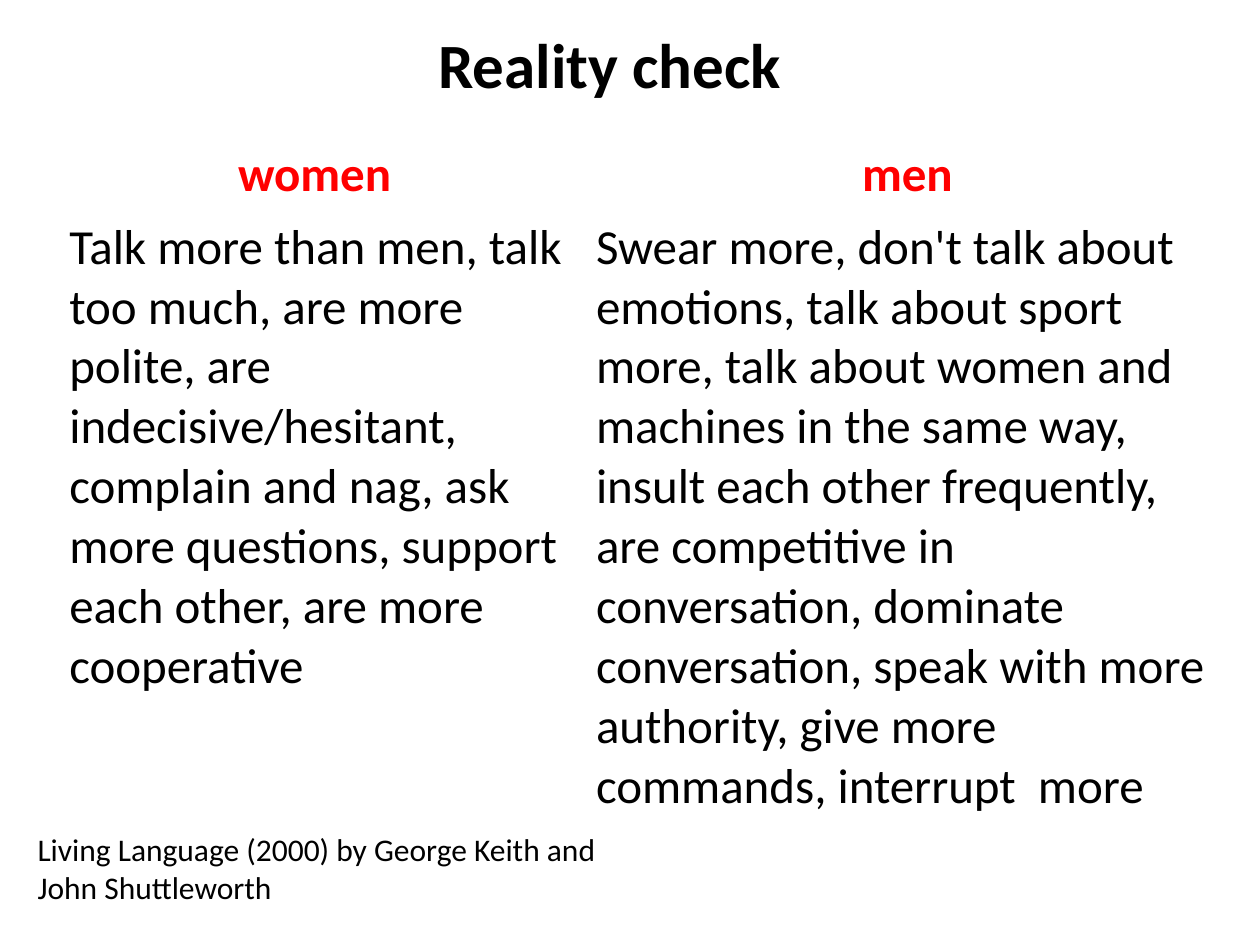
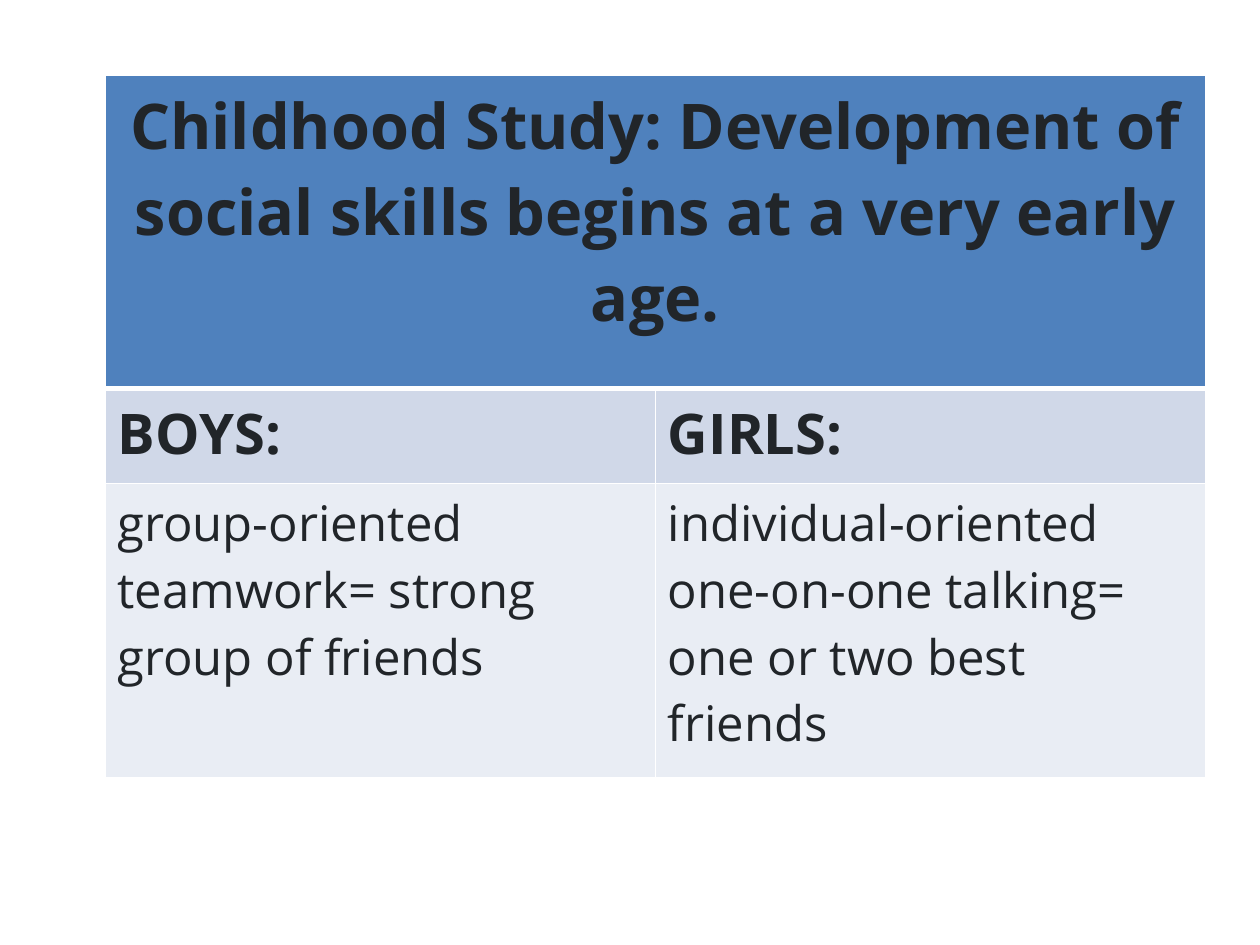
from lxml import etree
from pptx import Presentation
from pptx.dml.color import RGBColor
from pptx.enum import text
from pptx.oxml import ns
from pptx.util import Pt

BLACK, RED, WHITE, INK = "000000", "FF0000", "FFFFFF", "212529"
HEADER_BLUE, BAND_DARK, BAND_LIGHT = "4F81BD", "D0D8E8", "E9EDF4"
TITLE_ONLY, BLANK = 5, 6
CENTER = text.PP_ALIGN.CENTER
LEFT = text.PP_ALIGN.LEFT


def color(value):
    return RGBColor.from_string(value)


def write(frame, words, size, font, ink, bold=False, align=LEFT):
    frame.word_wrap = True
    para = frame.paragraphs[0]
    para.alignment = align
    span = para.add_run()
    span.text = words
    span.font.size = Pt(size)
    span.font.name = font
    span.font.bold = bold
    span.font.color.rgb = color(ink)


def add_title(slide, words, left, top, width, height):
    title = slide.shapes.title
    title.left, title.top = Pt(left), Pt(top)
    title.width, title.height = Pt(width), Pt(height)
    frame = title.text_frame
    frame.auto_size = text.MSO_AUTO_SIZE.NONE
    frame.vertical_anchor = text.MSO_ANCHOR.TOP
    write(frame, words, 36, "Calibri", BLACK, True, CENTER)


def add_note(slide, words, left, top, width, height):
    box = slide.shapes.add_textbox(Pt(left), Pt(top), Pt(width), Pt(height))
    write(box.text_frame, words, 18, "Calibri", BLACK)


def add_grid(slide, left, top, widths, heights):
    """Add a table without the style's own header and banding."""
    grid = slide.shapes.add_table(
        len(heights), len(widths), Pt(left), Pt(top),
        Pt(sum(widths)), Pt(sum(heights))).table
    grid.first_row = grid.horz_banding = False
    for column, width in zip(grid.columns, widths):
        column.width = Pt(width)
    for row, height in zip(grid.rows, heights):
        row.height = Pt(height)
    return grid


def set_borders(cell, **widths):
    """Draw white cell borders; widths are in points, keyed L, R, T, B."""
    props = cell._tc.get_or_add_tcPr()
    for side, width in widths.items():
        line = etree.SubElement(props, ns.qn(f"a:ln{side}"), w=str(Pt(width)))
        fill = etree.SubElement(line, ns.qn("a:solidFill"))
        etree.SubElement(fill, ns.qn("a:srgbClr"), val=WHITE)


def fill_cell(cell, fill=None):
    if fill:
        cell.fill.solid()
        cell.fill.fore_color.rgb = color(fill)
    else:
        cell.fill.background()


def build_reality_check(deck):
    slide = deck.slides.add_slide(deck.slide_layouts[TITLE_ONLY])
    grid = add_grid(slide, 32.4, 79.2, [301, 376.5], [41.5, 376])
    columns = [
        ("women ",
         "Talk more than men, talk too much, are more polite, are "
         "indecisive/hesitant, complain and nag, ask more questions, "
         "support each other, are more cooperative"),
        ("men ",
         "Swear more, don't talk about emotions, talk about sport more, "
         "talk about women and machines in the same way, insult each other "
         "frequently, are competitive in conversation, dominate "
         "conversation, speak with more authority, give more commands, "
         "interrupt  more"),
    ]
    for index, (heading, traits) in enumerate(columns):
        head, body = grid.cell(0, index), grid.cell(1, index)
        write(head.text_frame, heading, 28, "Calibri", RED, True, CENTER)
        write(body.text_frame, traits, 28, "Calibri", BLACK)
        fill_cell(head)
        fill_cell(body)
    add_note(slide, "Living Language (2000) by George Keith and "
             "John Shuttleworth", 14.4, 471, 360, 51)
    add_title(slide, "Reality check ", 173, 10.8, 359, 51)


def build_childhood_study(deck):
    slide = deck.slides.add_slide(deck.slide_layouts[BLANK])
    grid = add_grid(slide, 60, 43.2, [314.5, 314.5], [179, 54, 168])
    # Words, size, bold, alignment and fill of each row
    rows = [
        (["Childhood Study: Development of social skills begins at a very "
          "early age."], 36, True, CENTER, HEADER_BLUE),
        (["BOYS:", "GIRLS:"], 32, True, LEFT, BAND_DARK),
        (["group-oriented teamwork= strong group of friends",
          "individual-oriented one-on-one talking= one or two best friends"],
         28, False, LEFT, BAND_LIGHT),
    ]
    grid.cell(0, 0).merge(grid.cell(0, 1))
    for index, (entries, size, bold, align, fill) in enumerate(rows):
        above, below = (3 if index == 1 else 1), (3 if index == 0 else 1)
        for cell in grid.rows[index].cells:
            set_borders(cell, L=1, R=1, T=above, B=below)
            fill_cell(cell, fill)
        for column, words in enumerate(entries):
            write(grid.cell(index, column).text_frame, words, size,
                  "Open Sans", INK, bold, align)


def main():
    deck = Presentation()
    deck.slide_width, deck.slide_height = Pt(720), Pt(540)
    build_reality_check(deck)
    build_childhood_study(deck)
    deck.save("out.pptx")


if __name__ == "__main__":
    main()
